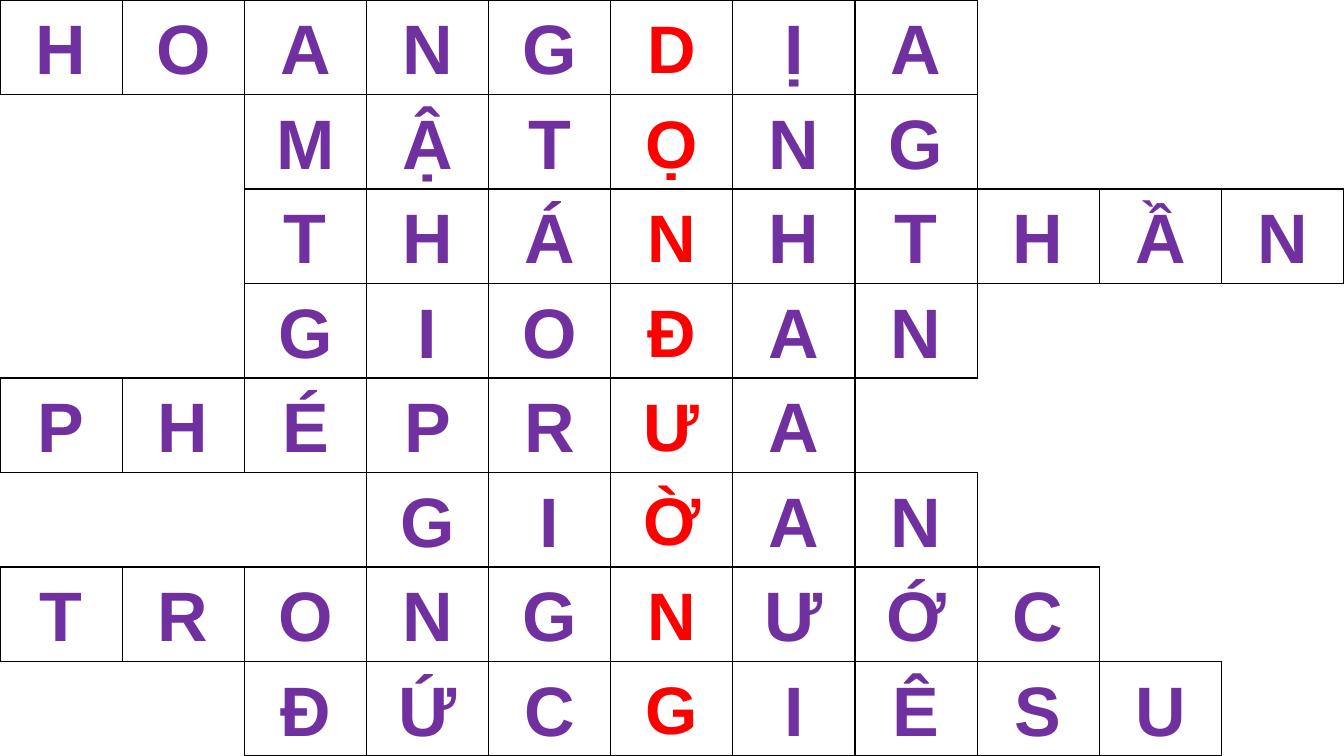
from dataclasses import dataclass

from lxml.etree import Element, SubElement
from pptx import Presentation
from pptx.dml.color import RGBColor
from pptx.enum.text import MSO_ANCHOR, PP_ALIGN
from pptx.oxml.ns import qn
from pptx.util import Pt


@dataclass(frozen=True)
class Theme:
    font: str = "Arial"
    letter: str = "7030A0"
    keyword: str = "FF0000"
    paper: str = "FFFFFF"
    line: str = "000000"
    letter_size: float = 50
    keyword_size: float = 48
    line_width: float = 1


PAGE_WIDTH, PAGE_HEIGHT = 960, 540
COLUMNS = 11
KEYWORD_COLUMN = 5

# Each answer with the column of its first letter
ANSWERS = [
    (0, "HOANGDỊA"),
    (2, "MẬTỌNG"[:3] + "ỌNG"),
    (2, "THÁNHTHẦN"),
    (2, "GIOĐAN"),
    (0, "PHÉPRƯA"),
    (3, "GIỜAN"),
    (0, "TRONGNƯỚC"),
    (2, "ĐỨCGIÊSU"),
]
ANSWERS[1] = (2, "MẬTỌNG")
ANSWERS[2] = (2, "THÁNHTHẦN")

# Side tag and the row and column step to the neighbour on that side
SIDES = {"a:lnL": (0, -1), "a:lnR": (0, 1), "a:lnT": (-1, 0), "a:lnB": (1, 0)}


class CrosswordSlide:
    def __init__(self, deck, theme):
        self.theme = theme
        self.page = deck.slides.add_slide(deck.slide_layouts[6])

    def apply(self, target, formats):
        for name, value in formats.items():
            setattr(target, name, value)

    def letter(self, cell, text, is_keyword):
        theme = self.theme
        paragraph = cell.text_frame.paragraphs[0]
        self.apply(paragraph, {"alignment": PP_ALIGN.CENTER,
                               "line_spacing": 1.07, "space_after": Pt(8)})
        span = paragraph.add_run()
        span.text = text
        size = theme.keyword_size if is_keyword else theme.letter_size
        color = theme.keyword if is_keyword else theme.letter
        self.apply(span.font, {"name": theme.font, "size": Pt(size), "bold": True})
        span.font.color.rgb = RGBColor.from_string(color)

    def border(self, cell, position, tag, visible):
        line = Element(qn(tag), w=str(Pt(self.theme.line_width)))
        if visible:
            fill = SubElement(line, qn("a:solidFill"))
            SubElement(fill, qn("a:srgbClr"), val=self.theme.line)
        else:
            SubElement(line, qn("a:noFill"))
        cell._tc.get_or_add_tcPr().insert(position, line)

    def crossword(self, answers):
        letters = {(row, start + offset): text
                   for row, (start, answer) in enumerate(answers)
                   for offset, text in enumerate(answer)}
        table = self.page.shapes.add_table(
            len(answers), COLUMNS, Pt(0), Pt(0), Pt(PAGE_WIDTH), Pt(PAGE_HEIGHT)).table
        self.apply(table, {"first_row": False, "horz_banding": False})
        for column in table.columns:
            column.width = Pt(PAGE_WIDTH / COLUMNS)
        for row in table.rows:
            row.height = Pt(PAGE_HEIGHT / len(answers))

        for row in range(len(answers)):
            for column in range(COLUMNS):
                cell = table.cell(row, column)
                self.apply(cell, {"vertical_anchor": MSO_ANCHOR.MIDDLE,
                                  "margin_left": Pt(4.5), "margin_right": Pt(4.5),
                                  "margin_top": Pt(0.6), "margin_bottom": Pt(0)})
                cell.fill.solid()
                cell.fill.fore_color.rgb = RGBColor.from_string(self.theme.paper)
                if (row, column) in letters:
                    self.letter(cell, letters[row, column], column == KEYWORD_COLUMN)
                # A side is drawn when a letter stands on either side of it
                for position, (tag, (down, right)) in enumerate(SIDES.items()):
                    visible = (row, column) in letters or (row + down, column + right) in letters
                    self.border(cell, position, tag, visible)


def main():
    deck = Presentation()
    deck.slide_width, deck.slide_height = Pt(PAGE_WIDTH), Pt(PAGE_HEIGHT)
    CrosswordSlide(deck, Theme()).crossword(ANSWERS)
    deck.save("out.pptx")


if __name__ == "__main__":
    main()
